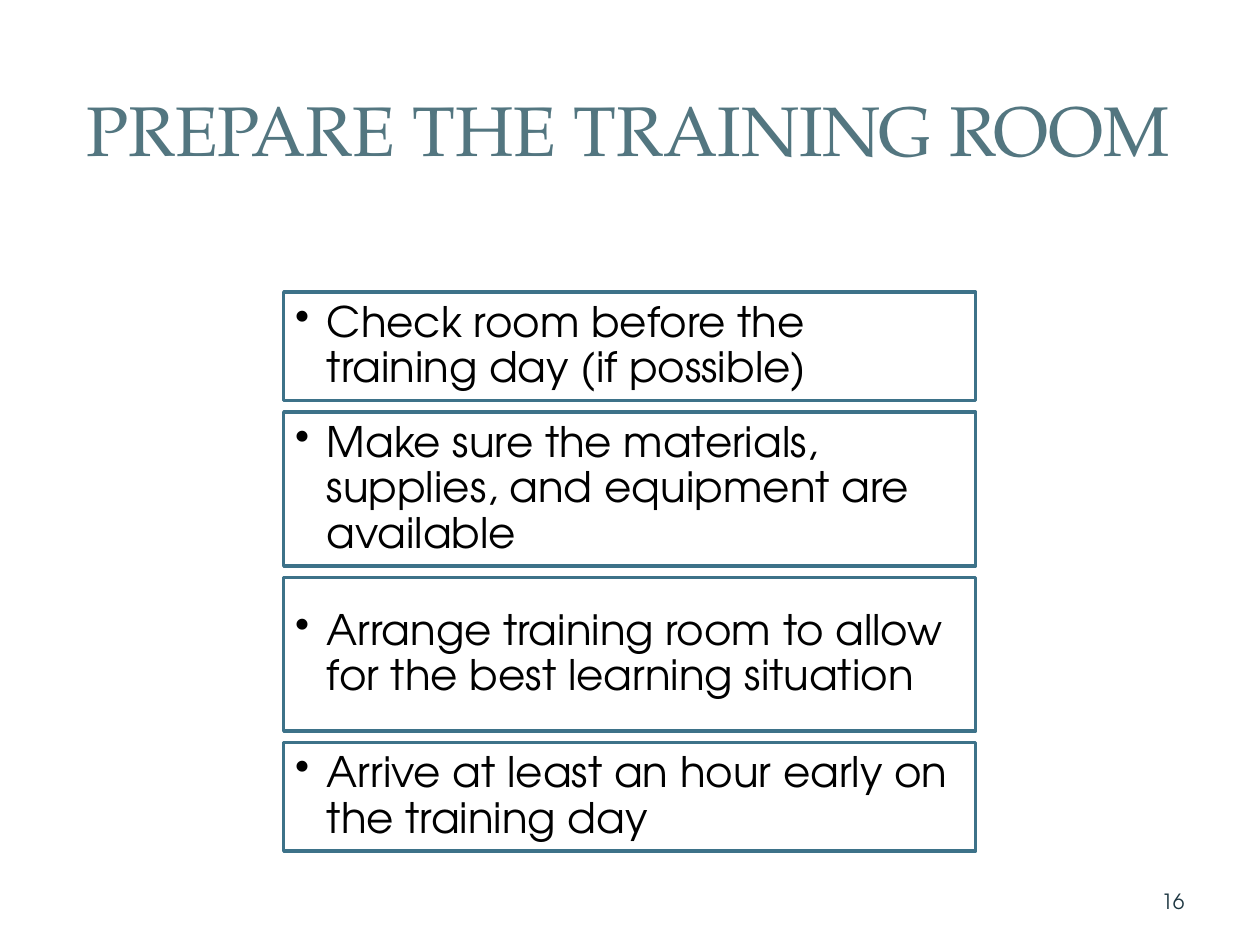
from pptx import Presentation
from pptx.dml.color import RGBColor
from pptx.enum.shapes import MSO_SHAPE
from pptx.enum.text import MSO_ANCHOR, MSO_AUTO_SIZE, PP_ALIGN
from pptx.oxml.ns import qn
from pptx.util import Cm, Pt
from lxml.etree import SubElement

HEADING = "PREPARE THE TRAINING ROOM"
STEPS = [
    ("Check room before the training day (if possible)", 2.19),
    ("Make sure the materials, supplies, and equipment are available", 3.1),
    ("Arrange training room to allow for the best learning situation", 3.1),
    ("Arrive at least an hour early on the training day", 2.19),
]
PAGE_NUMBER = "16"
HEADING_FONT, BODY_FONT = "TeX Gyre Pagella", "TeX Gyre Adventor"
STEP_LEFT, STEP_TOP, STEP_WIDTH, STEP_GAP = 5.72, 5.89, 13.95, 0.23
INSET, INDENT = 0.23, 0.64


def rgb(value):
    """Return the colour for a hex string."""
    return RGBColor.from_string(value)


def write(shape, text, font, size, color, align):
    """Put one formatted, vertically centred paragraph in a shape."""
    frame = shape.text_frame
    frame.text = text
    frame.word_wrap = True
    frame.auto_size = MSO_AUTO_SIZE.NONE
    frame.vertical_anchor = MSO_ANCHOR.MIDDLE
    paragraph = frame.paragraphs[0]
    paragraph.alignment = align
    run_font = paragraph.runs[0].font
    run_font.name, run_font.size = font, Pt(size)
    run_font.color.rgb = rgb(color)
    return paragraph


def add_step(slide, text, top, height):
    """Add an outlined box holding one bulleted step."""
    box = slide.shapes.add_shape(
        MSO_SHAPE.RECTANGLE, Cm(STEP_LEFT), Cm(top), Cm(STEP_WIDTH), Cm(height))
    box.shadow.inherit = False
    box.fill.solid()
    box.fill.fore_color.rgb = rgb("FFFFFF")
    box.line.color.rgb = rgb("3D7289")
    box.line.width = Pt(2)
    paragraph = write(box, text, BODY_FONT, 24, "000000", PP_ALIGN.LEFT)
    frame = box.text_frame
    frame.margin_left = frame.margin_right = Cm(INSET)
    frame.margin_top = frame.margin_bottom = Cm(INSET)
    paragraph.line_spacing = 0.9
    properties = paragraph._p.get_or_add_pPr()
    properties.set("marL", str(Cm(INDENT)))
    properties.set("indent", str(-Cm(INDENT)))
    SubElement(properties, qn("a:buChar")).set("char", "•")


def main():
    """Build the slide and save it."""
    deck = Presentation()
    deck.slide_width, deck.slide_height = Cm(25.4), Cm(19.05)
    slide = deck.slides.add_slide(deck.slide_layouts[5])

    heading = slide.shapes.title
    heading.left, heading.top = Cm(1.19), Cm(1.14)
    heading.width, heading.height = Cm(22.94), Cm(2.9)
    write(heading, HEADING, HEADING_FONT, 40, "537680", PP_ALIGN.CENTER)

    top = STEP_TOP
    for text, height in STEPS:
        add_step(slide, text, top, height)
        top += height + STEP_GAP

    page_number = slide.shapes.add_textbox(Cm(18.21), Cm(17.65), Cm(5.92), Cm(1.02))
    write(page_number, PAGE_NUMBER, BODY_FONT, 12, "1D3641", PP_ALIGN.RIGHT)

    deck.save("out.pptx")


if __name__ == "__main__":
    main()
